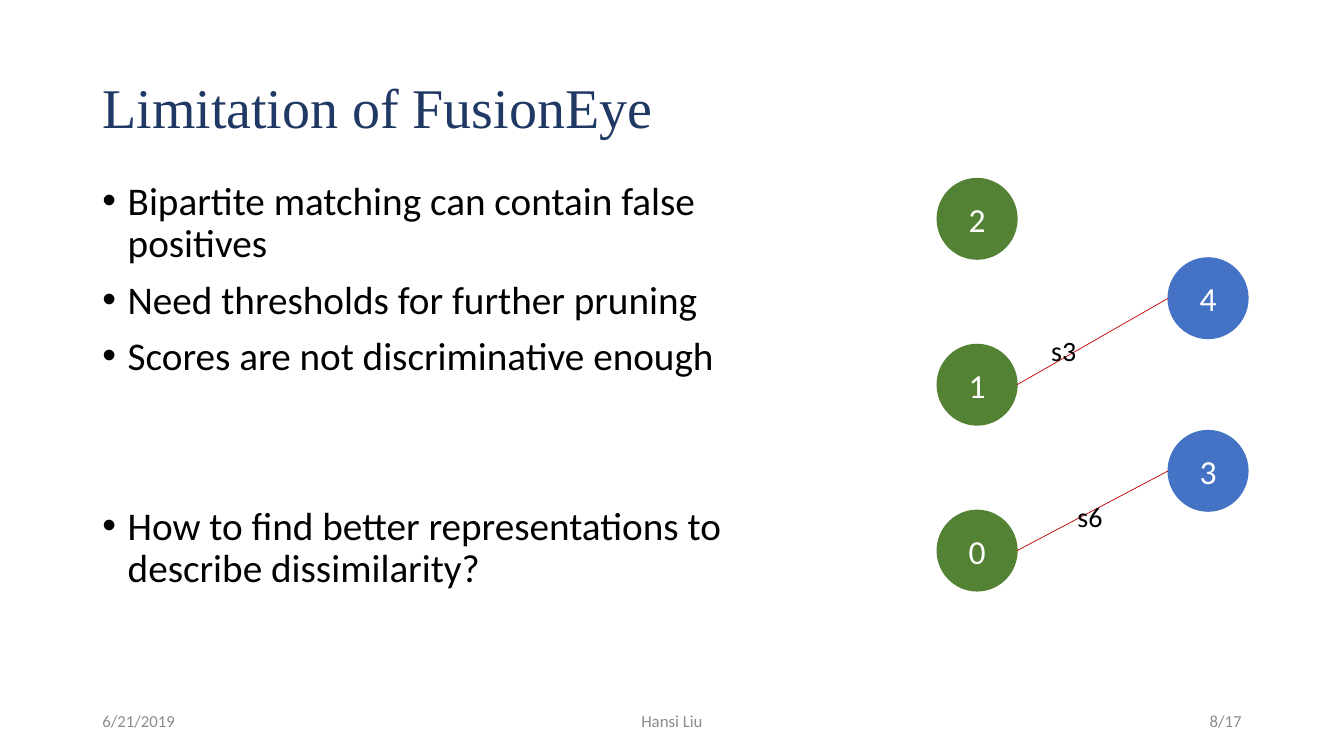
import pptx
import pptx.util
import pptx.dml.color
import pptx.enum.shapes
import pptx.enum.text
import lxml.etree
from pptx.oxml.ns import qn

Cm, Pt = pptx.util.Cm, pptx.util.Pt
ALIGN = pptx.enum.text.PP_ALIGN
ANCHOR = pptx.enum.text.MSO_ANCHOR
COLORS = {"title": "203864", "text": "000000", "footer": "8C8C8C", "light": "FFFFFF",
          "green": "548235", "blue": "4472C4", "edge": "C00000"}

deck = pptx.Presentation()
deck.slide_width, deck.slide_height = Cm(33.87), Cm(19.05)
page = deck.slides.add_slide(deck.slide_layouts[6])


def color(name):
    return pptx.dml.color.RGBColor.from_string(COLORS[name])


def write(para, text, size, tint, font="Calibri", align=ALIGN.LEFT):
    para.text = text
    para.alignment = align
    para.font.name, para.font.size = font, Pt(size)
    para.font.color.rgb = color(tint)


# Title
box = page.shapes.add_textbox(Cm(2.33), Cm(1.55), Cm(29.21), Cm(2.44))
box.text_frame.word_wrap = True
box.text_frame.vertical_anchor = ANCHOR.MIDDLE
title = box.text_frame.paragraphs[0]
title.line_spacing = 0.9
write(title, "Limitation of FusionEye", 40, "title", "Times New Roman")

# Bullets: text and space before
bullets = [("Bipartite matching can contain false positives", 0),
           ("Need thresholds for further pruning", 10),
           ("Scores are not discriminative enough", 10),
           ("How to find better representations to describe dissimilarity?", 91)]
box = page.shapes.add_textbox(Cm(2.33), Cm(4.45), Cm(19.05), Cm(12.7))
box.text_frame.word_wrap = True
for index, (text, gap) in enumerate(bullets):
    para = box.text_frame.add_paragraph() if index else box.text_frame.paragraphs[0]
    para.line_spacing, para.space_before = 0.9, Pt(gap)
    props = para._p.get_or_add_pPr()
    props.set("marL", str(Cm(0.64)))
    props.set("indent", str(-Cm(0.64)))
    lxml.etree.SubElement(props, qn("a:buFont")).set("typeface", "Arial")
    lxml.etree.SubElement(props, qn("a:buChar")).set("char", "•")
    write(para, text, 28, "text")

# Graph nodes: label, left, top, colour
WIDTH, HEIGHT = 2.01, 2.03
nodes = {label: (23.62, 4.5 + 4.18 * row, "green") for row, label in enumerate("210")}
nodes.update({label: (29.44, 6.5 + 4.35 * row, "blue") for row, label in enumerate("43")})
for label, (left, top, tint) in nodes.items():
    circle = page.shapes.add_shape(pptx.enum.shapes.MSO_SHAPE.OVAL,
                                   Cm(left), Cm(top), Cm(WIDTH), Cm(HEIGHT))
    circle.shadow.inherit = False
    circle.fill.solid()
    circle.fill.fore_color.rgb = color(tint)
    circle.line.color.rgb = color(tint)
    circle.line.width = Pt(1)
    circle.text_frame.word_wrap = False
    circle.text_frame.vertical_anchor = ANCHOR.MIDDLE
    write(circle.text_frame.paragraphs[0], label, 24, "light", align=ALIGN.CENTER)

# Matches between nodes, with their scores
for start, end, score, left, top in [("1", "4", "s3", 26.24, 8.28),
                                     ("0", "3", "s6", 26.9, 12.45)]:
    edge = page.shapes.add_connector(
        pptx.enum.shapes.MSO_CONNECTOR.STRAIGHT,
        Cm(nodes[start][0] + WIDTH), Cm(nodes[start][1] + HEIGHT / 2),
        Cm(nodes[end][0]), Cm(nodes[end][1] + HEIGHT / 2))
    edge.line.color.rgb = color("edge")
    edge.line.width = Pt(0.5)
    lxml.etree.SubElement(edge._element.spPr, qn("a:effectLst"))
    box = page.shapes.add_textbox(Cm(left), Cm(top), Cm(3), Cm(1.12))
    box.text_frame.word_wrap = True
    write(box.text_frame.paragraphs[0], score, 20, "text")

# Footer
for text, left, width, align in [("6/21/2019", 2.33, 7.62, ALIGN.LEFT),
                                 ("Hansi Liu", 11.22, 11.43, ALIGN.CENTER),
                                 ("8/17", 23.92, 7.62, ALIGN.RIGHT)]:
    box = page.shapes.add_textbox(Cm(left), Cm(17.65), Cm(width), Cm(1.02))
    box.text_frame.word_wrap = True
    box.text_frame.vertical_anchor = ANCHOR.MIDDLE
    write(box.text_frame.paragraphs[0], text, 12, "footer", align=align)

deck.save("out.pptx")
